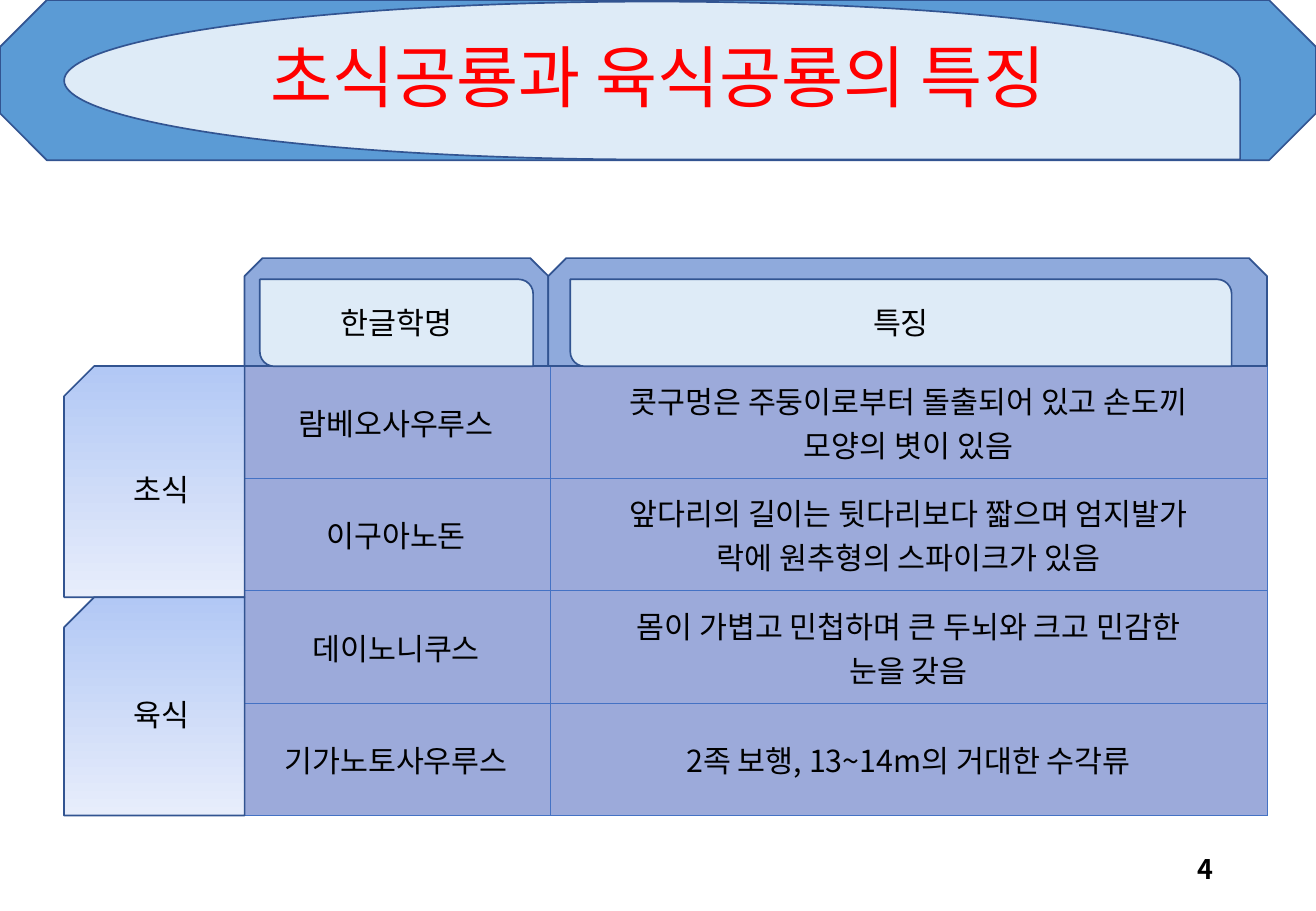
import pptx
import pptx.util
import pptx.dml.color
import pptx.enum.shapes
import pptx.enum.text
import pptx.oxml
import pptx.oxml.ns

Pt = pptx.util.Pt
RGBColor = pptx.dml.color.RGBColor
SHAPE = pptx.enum.shapes.MSO_SHAPE
ALIGN = pptx.enum.text.PP_ALIGN
MIDDLE = pptx.enum.text.MSO_ANCHOR.MIDDLE

FONT = "Noto Sans CJK KR"
BLACK = RGBColor(0x00, 0x00, 0x00)
RED = RGBColor(0xFF, 0x00, 0x00)
OUTLINE = RGBColor(0x32, 0x54, 0x91)
BANNER_BLUE = RGBColor(0x5B, 0x9B, 0xD5)
PALE_BLUE = RGBColor(0xDE, 0xEB, 0xF7)
TAB_BLUE = RGBColor(0x8F, 0xAA, 0xDC)
CELL_BLUE = RGBColor(0x9C, 0xAA, 0xDA)
BORDER = RGBColor(0x44, 0x72, 0xC4)
GRADIENT = (RGBColor(0xB2, 0xC8, 0xF5), RGBColor(0xE7, 0xED, 0xFB))

DINOSAURS = [
    ("람베오사우루스", "콧구멍은 주둥이로부터 돌출되어 있고 손도끼\n모양의 볏이 있음"),
    ("이구아노돈", "앞다리의 길이는 뒷다리보다 짧으며 엄지발가\n락에 원추형의 스파이크가 있음"),
    ("데이노니쿠스", "몸이 가볍고 민첩하며 큰 두뇌와 크고 민감한\n눈을 갖음"),
    ("기가노토사우루스", "2족 보행, 13~14m의 거대한 수각류"),
]


def write(frame, text, size=18, color=BLACK, align=ALIGN.CENTER, bold=False, spacing=None):
    """Fill a text frame, one paragraph per line of text."""
    frame.text = text
    for para in frame.paragraphs:
        para.alignment = align
        para.line_spacing = spacing
        font = para.font
        font.size, font.bold, font.name = Pt(size), bold, FONT
        font.color.rgb = color
        east_asian = pptx.oxml.parse_xml(
            f'<a:ea {pptx.oxml.ns.nsdecls("a")} typeface="{FONT}"/>')
        font._element.append(east_asian)


def add_text(page, box, text, **style):
    frame = page.shapes.add_textbox(*map(Pt, box)).text_frame
    frame.word_wrap = True
    frame.vertical_anchor = MIDDLE
    write(frame, text, **style)


def add_panel(page, kind, box, fill=None, flip=None):
    """Outlined shape, optionally flipped with flipH or flipV."""
    shape = page.shapes.add_shape(kind, *map(Pt, box))
    shape.shadow.inherit = False
    if fill is not None:
        shape.fill.solid()
        shape.fill.fore_color.rgb = fill
    shape.line.color.rgb = OUTLINE
    shape.line.width = Pt(1)
    if flip:
        shape._element.spPr.xfrm.set(flip, "1")
    return shape


def add_banner(page, box, title):
    left, top, width, height = box
    add_panel(page, SHAPE.OCTAGON, box, BANNER_BLUE)
    add_panel(page, SHAPE.TEAR, (left + 38, top + 1, width - 83, height - 1.4),
              PALE_BLUE, "flipV")
    add_text(page, box, title, size=40, color=RED, spacing=0.9)


def add_column_tab(page, box, inset_left, inset_right, label):
    left, top, width, height = box
    panel_left, panel_width = left + inset_left, width - inset_left - inset_right
    add_panel(page, SHAPE.SNIP_2_SAME_RECTANGLE, box, TAB_BLUE)
    add_panel(page, SHAPE.ROUND_2_DIAG_RECTANGLE,
              (panel_left, top + 12.6, panel_width, height - 12.4), PALE_BLUE, "flipV")
    add_text(page, (panel_left, top + 23.8, panel_width, 29), label)


def add_diet_label(page, box, label):
    shape = add_panel(page, SHAPE.SNIP_1_RECTANGLE, box, flip="flipH")
    shape.fill.gradient()
    shape.fill.gradient_angle = 270
    for stop, color, position in zip(shape.fill.gradient_stops, GRADIENT, (0, 1)):
        stop.color.rgb = color
        stop.position = position
    shape.text_frame.vertical_anchor = MIDDLE
    write(shape.text_frame, label)


def add_borders(cell):
    properties = cell._tc.get_or_add_tcPr()
    for side in ("lnL", "lnR", "lnT", "lnB"):
        properties.append(pptx.oxml.parse_xml(
            f'<a:{side} {pptx.oxml.ns.nsdecls("a")} w="{Pt(0.5)}"><a:solidFill>'
            f'<a:srgbClr val="{BORDER}"/></a:solidFill></a:{side}>'))


def add_feature_table(page, box, name_width):
    left, top, width, height = box
    table = page.shapes.add_table(len(DINOSAURS), 2, *map(Pt, box)).table
    table.first_row = table.horz_banding = False
    table.columns[0].width = Pt(name_width)
    table.columns[1].width = Pt(width - name_width)
    for row, texts in zip(table.rows, DINOSAURS):
        row.height = Pt(height / len(DINOSAURS))
        for cell, text in zip(row.cells, texts):
            add_borders(cell)
            cell.fill.solid()
            cell.fill.fore_color.rgb = CELL_BLUE
            cell.vertical_anchor = MIDDLE
            write(cell.text_frame, text)


def add_dinosaur_grid(page, box):
    left, top, width, height = box
    tab_height, label_width = 64, 107
    body_top = top + tab_height
    table_left = left + label_width
    # Features of each dinosaur
    add_feature_table(page, (table_left - 1.5, body_top, width - label_width + 1.5,
                             height - tab_height), 182.5)
    # Diet labels down the left side
    add_diet_label(page, (left, body_top, label_width, 137), "초식")
    add_diet_label(page, (left, body_top + 137, label_width, height - tab_height - 137), "육식")
    # Column tabs along the top
    name_width = 180
    add_column_tab(page, (table_left, top, name_width, tab_height), 9, 9, "한글학명")
    add_column_tab(page, (table_left + name_width, top, width - label_width - name_width,
                          tab_height), 13, 21, "특징")


def main():
    deck = pptx.Presentation()
    deck.slide_width, deck.slide_height = Pt(780), Pt(540)
    page = deck.slides.add_slide(deck.slide_layouts[6])
    add_banner(page, (0, 0, 780, 95), "초식공룡과 육식공룡의 특징")
    # Page number
    add_text(page, (551, 500.5, 175.5, 29), "4", size=16, align=ALIGN.RIGHT, bold=True)
    add_dinosaur_grid(page, (38, 153, 713, 330.4))
    deck.save("out.pptx")


if __name__ == "__main__":
    main()
